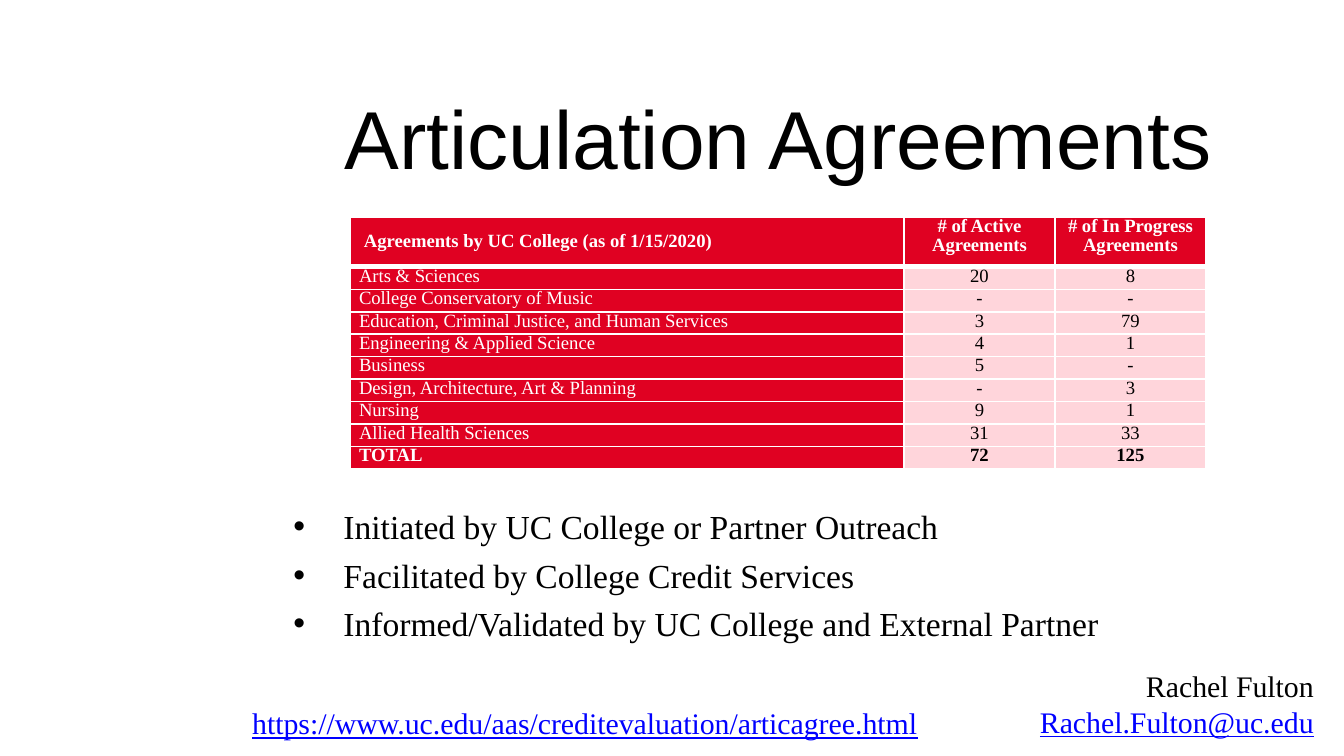
from dataclasses import dataclass
from typing import Any, NamedTuple

from lxml import etree
from pptx import Presentation
from pptx import util as u
from pptx.dml.color import RGBColor
from pptx.enum import text
from pptx.oxml import ns

SCALE = 9144000 / 1344


@dataclass(frozen=True)
class Theme:
    sans: str = "Arial"
    serif: str = "Times New Roman"
    black: str = "000000"
    white: str = "FFFFFF"
    red: str = "E00122"
    pink: str = "FFD5DB"
    blue: str = "0000FF"
    title: int = 44
    body: int = 18
    note: int = 16
    cell: int = 10


class Box(NamedTuple):
    left: int
    top: int
    width: int
    height: int


class Row(NamedTuple):
    name: str
    active: str
    pending: str


THEME = Theme()
ALIGN = text.PP_ALIGN
ANCHOR = text.MSO_ANCHOR
HEAD = Row("Agreements by UC College (as of 1/15/2020)",
           "# of Active Agreements", "# of In Progress Agreements")
ROWS = [
    HEAD,
    Row("Arts & Sciences", "20", "8"),
    Row("College Conservatory of Music", "-", "-"),
    Row("Education, Criminal Justice, and Human Services", "3", "79"),
    Row("Engineering & Applied Science", "4", "1"),
    Row("Business", "5", "-"),
    Row("Design, Architecture, Art & Planning", "-", "3"),
    Row("Nursing", "9", "1"),
    Row("Allied Health Sciences", "31", "33"),
    Row("TOTAL", "72", "125"),
]
POINTS = [
    "Initiated by UC College or Partner Outreach",
    "Facilitated by College Credit Services",
    "Informed/Validated by UC College and External Partner",
]
LINK = "https://www.uc.edu/aas/creditevaluation/articagree.html"
MAIL = "Rachel.Fulton@uc.edu"


def px(size: float) -> u.Emu:
    return u.Emu(round(size * SCALE))


def apply(item: Any, **form: Any) -> None:
    for key, value in form.items():
        setattr(item, key, value)


def place(shape: Any, box: Box) -> None:
    apply(shape, **{key: px(size) for key, size in box._asdict().items()})


def write(para: Any, words: str, size: int, color: str, face: str = THEME.serif,
          align: Any = ALIGN.LEFT, **form: Any) -> None:
    para.alignment = align
    run = para.add_run()
    run.text = words
    apply(run.font, name=face, size=u.Pt(size), **form)
    run.font.color.rgb = RGBColor.from_string(color)


def bullet(para: Any, indent: int) -> None:
    props = para._p.get_or_add_pPr()
    props.set("marL", str(px(indent)))
    props.set("indent", str(-px(indent)))
    etree.SubElement(props, ns.qn("a:buFont"), typeface=THEME.sans)
    etree.SubElement(props, ns.qn("a:buChar"), char="•")


def border(cell: Any, **widths: float) -> None:
    """Draw white cell edges; keys are L, R, T and B, values are points."""
    props = cell._tc.get_or_add_tcPr()
    for spot, side in enumerate("LRTB"):
        line = etree.Element(ns.qn(f"a:ln{side}"), w=str(u.Pt(widths.get(side, 1))))
        fill = etree.SubElement(line, ns.qn("a:solidFill"))
        etree.SubElement(fill, ns.qn("a:srgbClr"), val=THEME.white)
        props.insert(spot, line)


def add_title(slide: Any, box: Box) -> None:
    shape = slide.shapes.title
    place(shape, box)
    apply(shape.text_frame, vertical_anchor=ANCHOR.MIDDLE, auto_size=text.MSO_AUTO_SIZE.NONE)
    write(shape.text_frame.paragraphs[0], "Articulation Agreements", THEME.title,
          THEME.black, THEME.sans, ALIGN.CENTER)


def add_list(slide: Any, box: Box) -> None:
    shape = slide.placeholders[1]
    place(shape, box)
    frame = shape.text_frame
    apply(frame, vertical_anchor=ANCHOR.TOP, auto_size=text.MSO_AUTO_SIZE.NONE)
    for spot, words in enumerate(POINTS):
        para = frame.add_paragraph() if spot else frame.paragraphs[0]
        bullet(para, 50)
        para.space_before = u.Pt(4.5 if spot else 0)
        write(para, words, THEME.body, THEME.black)


def add_cell(cell: Any, words: str, row: int, col: int) -> None:
    head, label = row == 0, col == 0
    red = head or label
    title = head and label
    apply(cell, margin_left=px(14 if title else 9), margin_right=px(9),
          margin_top=0, margin_bottom=0,
          vertical_anchor=ANCHOR.MIDDLE if title else ANCHOR.TOP)
    cell.fill.solid()
    cell.fill.fore_color.rgb = RGBColor.from_string(THEME.red if red else THEME.pink)
    border(cell, B=3 if head else 1, T=3 if row == 1 else 1)
    para = cell.text_frame.paragraphs[0]
    para.line_spacing = 0.93
    write(para, words, THEME.cell, THEME.white if red else THEME.black,
          align=ALIGN.LEFT if label else ALIGN.CENTER,
          bold=row in (0, len(ROWS) - 1))


def add_grid(slide: Any, box: Box, top: int, widths: list[int]) -> None:
    shape = slide.shapes.add_table(len(ROWS), len(widths), *map(px, box))
    grid = shape.table
    apply(grid, first_row=False, horz_banding=False)
    for col, width in zip(grid.columns, widths):
        col.width = px(width)
    rest = (box.height - top) / (len(ROWS) - 1)
    for row, data in enumerate(ROWS):
        grid.rows[row].height = px(rest if row else top)
        for col, words in enumerate(data):
            add_cell(grid.cell(row, col), words, row, col)


def add_note(slide: Any, box: Box, lines: list[str], align: Any, inset: int = 13) -> None:
    """Add a text box whose last line is set as a web or mail address."""
    frame = slide.shapes.add_textbox(*map(px, box)).text_frame
    apply(frame, word_wrap=True, margin_right=px(inset))
    for spot, words in enumerate(lines):
        para = frame.add_paragraph() if spot else frame.paragraphs[0]
        last = spot == len(lines) - 1
        write(para, words, THEME.note, THEME.blue if last else THEME.black,
              align=align, underline=last)


def main() -> None:
    deck = Presentation()
    apply(deck, slide_width=px(1344), slide_height=px(756))
    slide = deck.slides.add_slide(deck.slide_layouts[1])
    add_title(slide, Box(280, 74, 997, 126))
    add_list(slide, Box(280, 499, 997, 192))
    add_note(slide, Box(239, 698, 780, 50), [LINK], ALIGN.LEFT)
    add_grid(slide, Box(350, 217, 856, 252), 50, [554, 151, 151])
    add_note(slide, Box(1023, 661, 312, 86), ["Rachel Fulton", MAIL], ALIGN.RIGHT, 21)
    deck.save("out.pptx")


if __name__ == "__main__":
    main()
